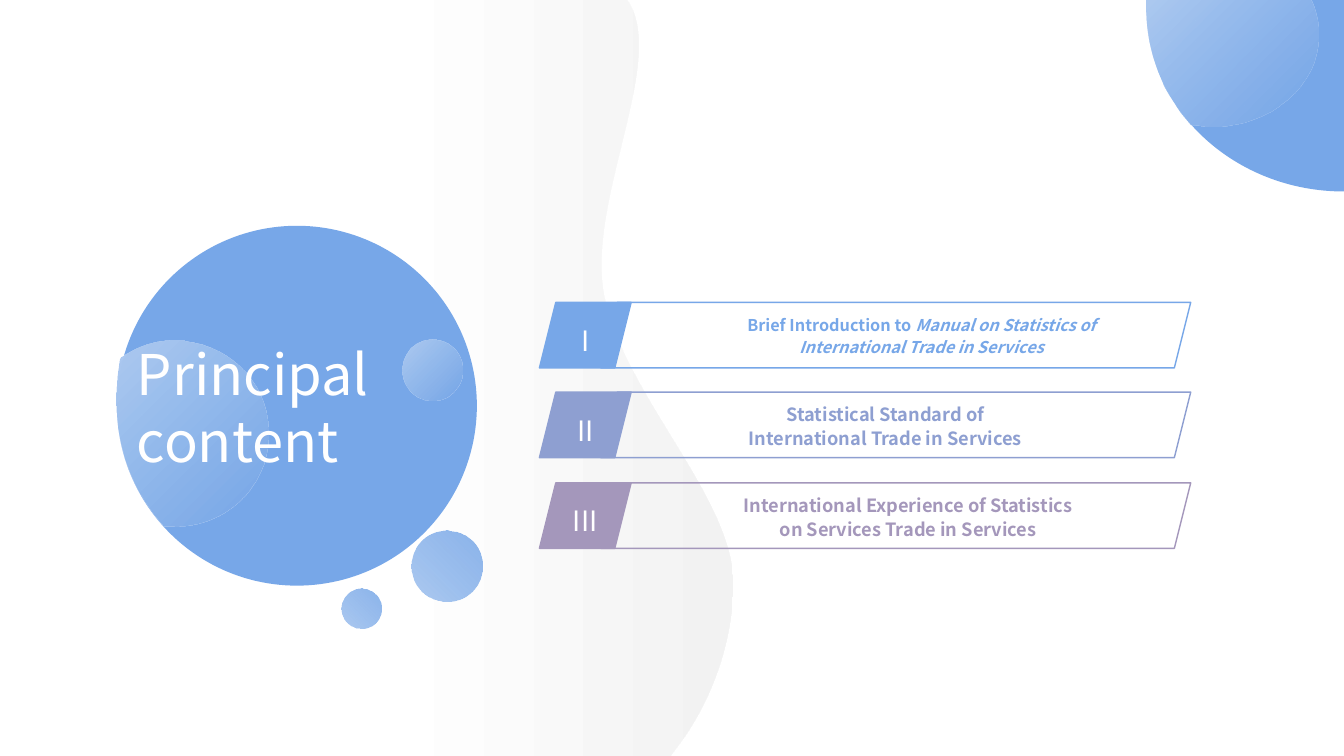
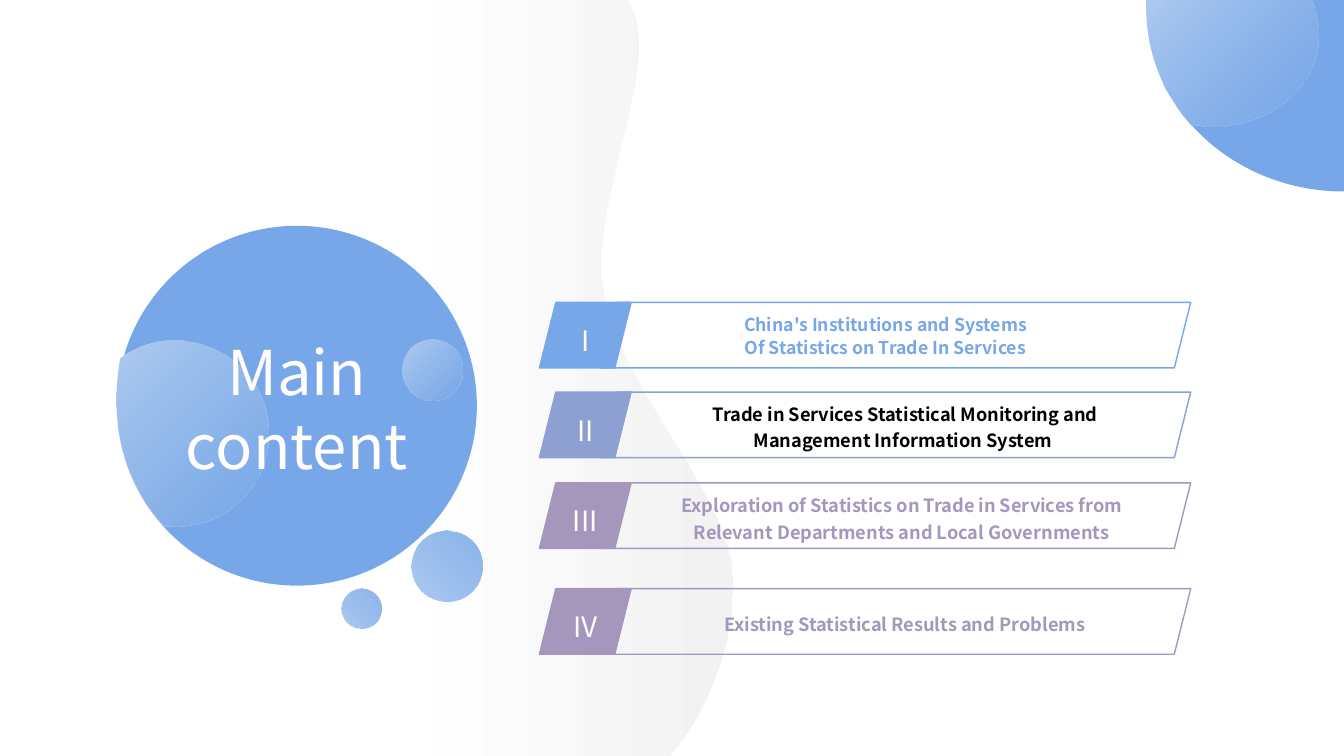
from dataclasses import dataclass

from lxml.etree import Element, SubElement
from pptx import Presentation
from pptx.dml.color import RGBColor
from pptx.enum.shapes import MSO_SHAPE
from pptx.enum.text import MSO_ANCHOR, MSO_AUTO_SIZE, PP_ALIGN
from pptx.oxml.ns import qn
from pptx.util import Inches, Pt


@dataclass(frozen=True)
class Theme:
    blue: str = "77A7E8"
    light_blue: str = "ADCAF1"
    periwinkle: str = "8E9FD1"
    mauve: str = "A497BB"
    white: str = "FFFFFF"
    grey: str = "F2F2F2"
    black: str = "000000"
    title_font: str = "Noto Sans CJK JP"
    body_font: str = "Noto Sans CJK SC"
    numeral_size: float = 20
    label_size: float = 13
    line_width: float = 1


@dataclass(frozen=True)
class Title:
    text: str
    box: tuple
    size: float
    align: PP_ALIGN = PP_ALIGN.CENTER


@dataclass(frozen=True)
class Label:
    text: str
    left: float
    width: float
    italic_tail: str = ""
    size: float = Theme.label_size
    spacing: float = 1.1
    color: str = ""


# Outlines: a start point, then points (2 numbers) or cubic curves (6 numbers).
WAVE = [(3.81, 7.5), (3.81, 0), (6.22, 0), (6.24, 0.03),
        (6.6, 0.63, 5.82, 1.99, 5.99, 2.92), (6.17, 3.88, 7.23, 4.9, 7.27, 5.73),
        (7.29, 6.3, 7.08, 6.92, 6.74, 7.38), (6.65, 7.5)]
CORNER = [(11.37, 0), (13.33, 0), (13.33, 1.9), (12.25, 1.9, 11.37, 1.09, 11.37, 0.09)]
CORNER_GLOSS = [(11.37, 0), (13, 0), (13.03, 0.07), (13.06, 0.16, 13.08, 0.25, 13.08, 0.35),
                (13.08, 0.85, 12.6, 1.26, 12.01, 1.26), (11.98, 1.26, 11.94, 1.26, 11.91, 1.25),
                (11.82, 1.24), (11.81, 1.24), (11.53, 0.93, 11.37, 0.53, 11.37, 0.09)]
BUBBLE_GLOSS = [(1.68, 3.38), (2.19, 3.35, 2.63, 3.74, 2.66, 4.25),
                (2.69, 4.76, 2.3, 5.19, 1.79, 5.22), (1.76, 5.23, 1.73, 5.23, 1.7, 5.22),
                (1.62, 5.22), (1.62, 5.21), (1.35, 4.91, 1.18, 4.52, 1.16, 4.08),
                (1.15, 3.9, 1.16, 3.73, 1.19, 3.57), (1.2, 3.55), (1.25, 3.52),
                (1.37, 3.44, 1.52, 3.39, 1.68, 3.38)]

# Each row: top of the bar, top of the label, colour, numeral.
ROWS = ((3, 3.04, Theme.blue, "I"),
        (3.89, 3.93, Theme.periwinkle, "II"),
        (4.79, 4.84, Theme.mauve, "III"),
        (5.84, 5.89, Theme.mauve, "IV"))
ROW_HEIGHT = 0.65
LABEL_HEIGHT = 0.57


def write(shape, text, *, size, font, color, italic_tail="", bold=False,
          align=PP_ALIGN.CENTER, spacing=None):
    paragraph = shape.text_frame.paragraphs[0]
    paragraph.alignment = align
    if spacing:
        paragraph.line_spacing = spacing
    for content, italic in ((text, False), (italic_tail, True)):
        if content:
            run = paragraph.add_run()
            run.text = content
            run.font.size = Pt(size)
            run.font.name = font
            run.font.bold = bold
            run.font.italic = italic
            run.font.color.rgb = RGBColor.from_string(color)


class Deck:
    def __init__(self, theme):
        self.theme = theme
        self.presentation = Presentation()
        self.presentation.slide_width = Inches(13.33)
        self.presentation.slide_height = Inches(7.5)
        self.slide = None

    def add_slide(self, title, labels):
        self.slide = self.presentation.slides.add_slide(self.presentation.slide_layouts[6])
        self.backdrop()
        self.bubbles(title)
        for row, label in zip(ROWS, labels):
            self.row(*row, label)

    def paint(self, shape, color=None, line=None):
        shape.shadow.inherit = False
        if color:
            shape.fill.solid()
            shape.fill.fore_color.rgb = RGBColor.from_string(color)
        else:
            shape.fill.background()
        if line:
            shape.line.color.rgb = RGBColor.from_string(line)
            shape.line.width = Pt(self.theme.line_width)
        else:
            shape.line.fill.background()

    def gradient(self, shape, start, end, angle, opacity=100):
        """Fill with two colours; angle is counter-clockwise, opacity is that of the end."""
        self.paint(shape)
        shape.fill.gradient()
        shape.fill.gradient_angle = angle
        for stop, color, position in zip(shape.fill.gradient_stops, (start, end), (0, 1)):
            stop.color.rgb = RGBColor.from_string(color)
            stop.position = position
        if opacity < 100:
            end_color = list(shape._element.spPr.iter(qn("a:srgbClr")))[-1]
            SubElement(end_color, qn("a:alpha"), val=str(opacity * 1000))

    def gloss(self, shape, opacity, angle=315):
        self.gradient(shape, self.theme.light_blue, self.theme.blue, angle, opacity)

    def preset(self, kind, left, top, width, height):
        return self.slide.shapes.add_shape(
            kind, Inches(left), Inches(top), Inches(width), Inches(height))

    def circle(self, left, top, size):
        return self.preset(MSO_SHAPE.OVAL, left, top, size, size)

    def outline(self, segments):
        """Draw a freeform through the end points, then bend its curved segments."""
        points = [(Inches(segment[-2]), Inches(segment[-1])) for segment in segments]
        builder = self.slide.shapes.build_freeform(*points[0])
        builder.add_line_segments(points[1:], close=False)
        shape = builder.convert_to_shape()
        geometry = next(shape._element.iter(qn("a:path")))
        for element, segment in zip(list(geometry), segments):
            if len(segment) == 6:
                element.tag = qn("a:cubicBezTo")
                for index in (0, 1):
                    x, y = segment[2 * index:2 * index + 2]
                    element.insert(index, Element(
                        qn("a:pt"), x=str(Inches(x) - shape.left), y=str(Inches(y) - shape.top)))
        SubElement(geometry, qn("a:close"))
        return shape

    def text_box(self, left, top, width, height, text, **text_format):
        box = self.slide.shapes.add_textbox(
            Inches(left), Inches(top), Inches(width), Inches(height))
        box.text_frame.word_wrap = True
        write(box, text, **text_format)
        return box

    def backdrop(self):
        self.gradient(self.outline(WAVE), self.theme.white, self.theme.grey, 0)
        self.paint(self.outline(CORNER), self.theme.blue)
        self.gloss(self.outline(CORNER_GLOSS), 70)

    def bubbles(self, title):
        self.paint(self.circle(1.16, 2.24, 3.57), self.theme.blue)
        self.gloss(self.circle(3.99, 3.37, 0.6), 93)
        self.gloss(self.outline(BUBBLE_GLOSS), 91)
        box = self.text_box(*title.box, title.text, size=title.size, align=title.align,
                            font=self.theme.title_font, color=self.theme.white)
        box.text_frame.auto_size = MSO_AUTO_SIZE.SHAPE_TO_FIT_TEXT
        for left, top, size in ((4.08, 5.26, 0.71), (3.39, 5.84, 0.39)):
            self.gloss(self.circle(left, top, size), 84, angle=45)

    def row(self, top, label_top, color, numeral, label):
        tag = self.preset(MSO_SHAPE.PARALLELOGRAM, 5.35, top, 0.91, ROW_HEIGHT)
        self.paint(tag, color, color)
        tag.text_frame.margin_top = tag.text_frame.margin_bottom = 0
        tag.text_frame.vertical_anchor = MSO_ANCHOR.MIDDLE
        write(tag, numeral, size=self.theme.numeral_size, font=self.theme.body_font,
              color=self.theme.white, spacing=1.3)
        frame = self.preset(MSO_SHAPE.PARALLELOGRAM, 5.96, top, 5.85, ROW_HEIGHT)
        self.paint(frame, line=color)
        box = self.text_box(
            label.left, label_top, label.width, LABEL_HEIGHT,
            label.text, italic_tail=label.italic_tail, size=label.size, bold=True,
            font=self.theme.body_font, color=label.color or color, spacing=label.spacing)
        box.text_frame.vertical_anchor = MSO_ANCHOR.MIDDLE


def main():
    deck = Deck(Theme())
    deck.add_slide(
        Title("Principal content", (1.26, 3.32, 3.33, 1.45), 40, PP_ALIGN.JUSTIFY),
        [Label("Brief Introduction to ", 7.19, 3.9, size=11.6,
               italic_tail="Manual on Statistics of International Trade in Services"),
         Label("Statistical Standard of International Trade in Services", 7.19, 3.18),
         Label("International Experience of Statistics on Services Trade in Services",
               7.19, 3.63)])
    deck.add_slide(
        Title("Main content", (1.5, 3.26, 2.89, 1.58), 44),
        [Label("China's Institutions and Systems Of Statistics on Trade In Services",
               7.19, 3.18, size=12.6),
         Label(" Trade in Services Statistical Monitoring and Management Information System",
               6.66, 4.59, spacing=1.2, color=Theme.black),
         Label("Exploration of Statistics on Trade in Services from "
               "Relevant Departments and Local Governments", 6.53, 4.82, spacing=1.2),
         Label("Existing Statistical Results and Problems", 6.92, 4.1, spacing=1.2)])
    deck.presentation.save("out.pptx")


if __name__ == "__main__":
    main()
